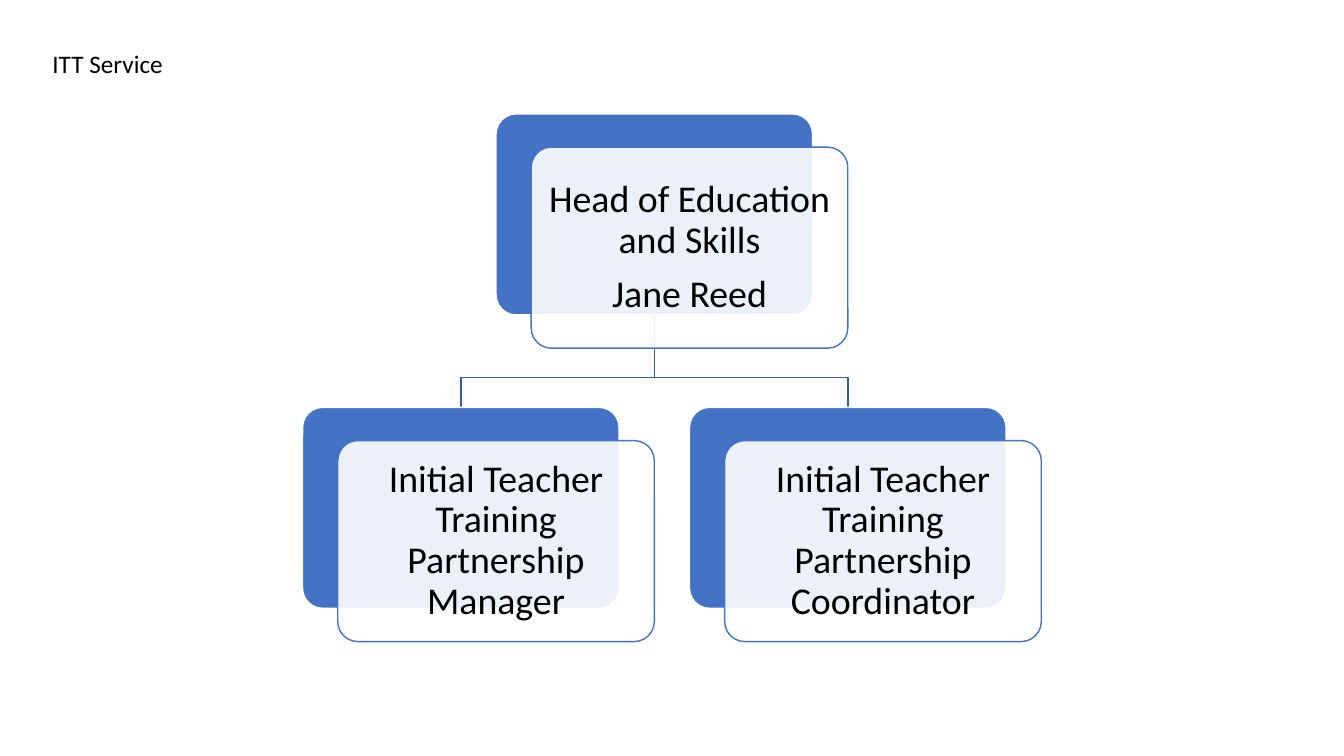
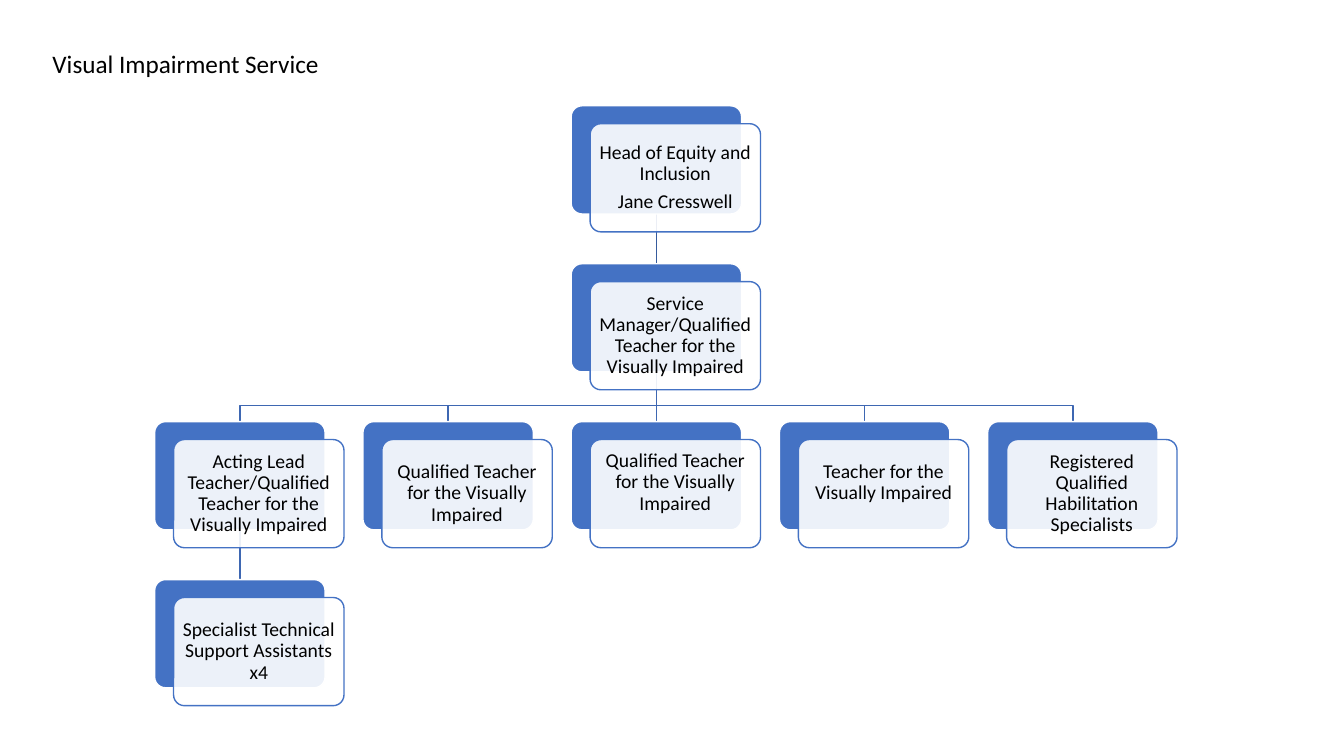
from dataclasses import dataclass
from itertools import count

from lxml.etree import SubElement
from pptx import Presentation
from pptx.dml.color import RGBColor
from pptx.enum.shapes import MSO_CONNECTOR, MSO_SHAPE
from pptx.enum.text import MSO_ANCHOR, PP_ALIGN
from pptx.oxml.ns import qn
from pptx.util import Inches, Pt

FONT = "Calibri"
COLOURS = {"card": "4472C4", "paper": "FFFFFF", "text": "000000",
           "top link": "365B9D", "lower link": "3E67B2"}


@dataclass
class Role:
    lines: tuple
    reports: tuple = ()
    lift: float = 0  # extra bottom inset, in inches
    col: float = 0
    row: int = 0


# Content
VI_TEACHER = "Qualified Teacher for the Visually Impaired"
CHARTS = [
    {"title": "ITT Service", "centre": 6.49, "top": 1.13, "card": 3.14,
     "size": 27, "inset": 0.1,
     "head": Role(("Head of Education and Skills", "Jane Reed"), (
         Role(("Initial Teacher Training Partnership Manager",)),
         Role(("Initial Teacher Training Partnership Coordinator",)),
     ))},
    {"title": "Visual Impairment Service", "centre": 6.51, "top": 1.05, "card": 1.69,
     "size": 14, "inset": 0.05,
     "head": Role(("Head of Equity and Inclusion", "Jane Cresswell"), (
         Role(("Service Manager/Qualified Teacher for the Visually Impaired",), (
             Role(("Acting Lead Teacher/Qualified Teacher for the Visually Impaired",), (
                 Role(("Specialist Technical Support Assistants x4",)),
             )),
             Role((VI_TEACHER,)),
             Role((VI_TEACHER,), lift=0.22),
             Role(("Teacher for the Visually Impaired",), lift=0.22),
             Role(("Registered Qualified Habilitation Specialists",)),
         )),
     ))},
]


def rgb(name):
    return RGBColor.from_string(COLOURS[name])


def write(frame, lines, size, align):
    frame.word_wrap = True
    frame.text = "\n".join(lines)
    for paragraph in frame.paragraphs:
        paragraph.alignment = align
        for run in paragraph.runs:
            run.font.name = FONT
            run.font.size = Pt(size)
            run.font.color.rgb = rgb("text")


def arrange(role, free_cols, row=0):
    """Leaves take the next column; a manager sits midway over the reports."""
    role.row = row
    for report in role.reports:
        arrange(report, free_cols, row + 1)
    if role.reports:
        role.col = (role.reports[0].col + role.reports[-1].col) / 2
    else:
        role.col = next(free_cols)


class OrgChart:
    def __init__(self, slide, chart):
        self.shapes = slide.shapes
        self.chart = chart
        self.head = chart["head"]
        # Every length follows from the card width
        self.width = chart["card"]
        self.height = self.width * 0.635
        self.col_step = self.width * 11 / 9
        self.row_step = self.height * 1.46
        self.shift = (self.width / 9, self.width * 0.105)
        arrange(self.head, count())
        self.draw_links(self.head)
        self.draw_cards(self.head)

    def anchor(self, role):
        """Top centre of a role's back card."""
        x = self.chart["centre"] + (role.col - self.head.col) * self.col_step
        return x, self.chart["top"] + role.row * self.row_step

    def draw_links(self, manager):
        x, top = self.anchor(manager)
        bottom = top + self.height
        for report in manager.reports:
            end_x, end_y = self.anchor(report)
            if report.col == manager.col:
                link = self.shapes.add_connector(
                    MSO_CONNECTOR.STRAIGHT,
                    *map(Inches, (x, bottom, end_x, end_y)))
                SubElement(link._element.spPr, qn("a:effectLst"))
            else:
                bus = bottom + (end_y - bottom) * 0.68
                path = self.shapes.build_freeform(Inches(x), Inches(bottom))
                path.add_line_segments(
                    [(Inches(px), Inches(py)) for px, py in
                     ((x, bus), (end_x, bus), (end_x, end_y))], close=False)
                link = path.convert_to_shape()
                link.fill.background()
                link.shadow.inherit = False
            link.line.color.rgb = rgb("lower link" if manager.row else "top link")
            link.line.width = Pt(1)
            self.draw_links(report)

    def draw_card(self, left, top, fill, line):
        card = self.shapes.add_shape(
            MSO_SHAPE.ROUNDED_RECTANGLE,
            *map(Inches, (left, top, self.width, self.height)))
        card.adjustments[0] = 0.1
        card.shadow.inherit = False
        card.fill.solid()
        card.fill.fore_color.rgb = rgb(fill)
        card.line.color.rgb = rgb(line)
        card.line.width = Pt(1)
        return card

    def draw_cards(self, role):
        x, top = self.anchor(role)
        left = x - self.width / 2
        self.draw_card(left, top, "card", "paper")
        front = self.draw_card(left + self.shift[0], top + self.shift[1], "paper", "card")
        tint = front._element.spPr.find(qn("a:solidFill"))[0]
        SubElement(tint, qn("a:alpha")).set("val", "90000")

        frame = front.text_frame
        size, inset = self.chart["size"], Inches(self.chart["inset"])
        write(frame, role.lines, size, PP_ALIGN.CENTER)
        frame.vertical_anchor = MSO_ANCHOR.MIDDLE
        frame.margin_left = frame.margin_right = frame.margin_top = inset
        frame.margin_bottom = inset + Inches(role.lift)
        for paragraph in frame.paragraphs:
            paragraph.line_spacing = 0.9
            paragraph.space_after = Pt(size * 0.35)
        for report in role.reports:
            self.draw_cards(report)


def main():
    prs = Presentation()
    prs.slide_width, prs.slide_height = Inches(13.33), Inches(7.5)

    # Shared title position
    layout = prs.slide_layouts[5]
    heading = layout.placeholders[0]
    heading.left, heading.top = Inches(0.42), Inches(0.43)
    heading.width, heading.height = Inches(3.66), Inches(0.4)
    heading.text_frame.vertical_anchor = MSO_ANCHOR.TOP

    for chart in CHARTS:
        slide = prs.slides.add_slide(layout)
        write(slide.shapes.title.text_frame, [chart["title"]], 18, PP_ALIGN.LEFT)
        OrgChart(slide, chart)
    prs.save("out.pptx")


if __name__ == "__main__":
    main()
